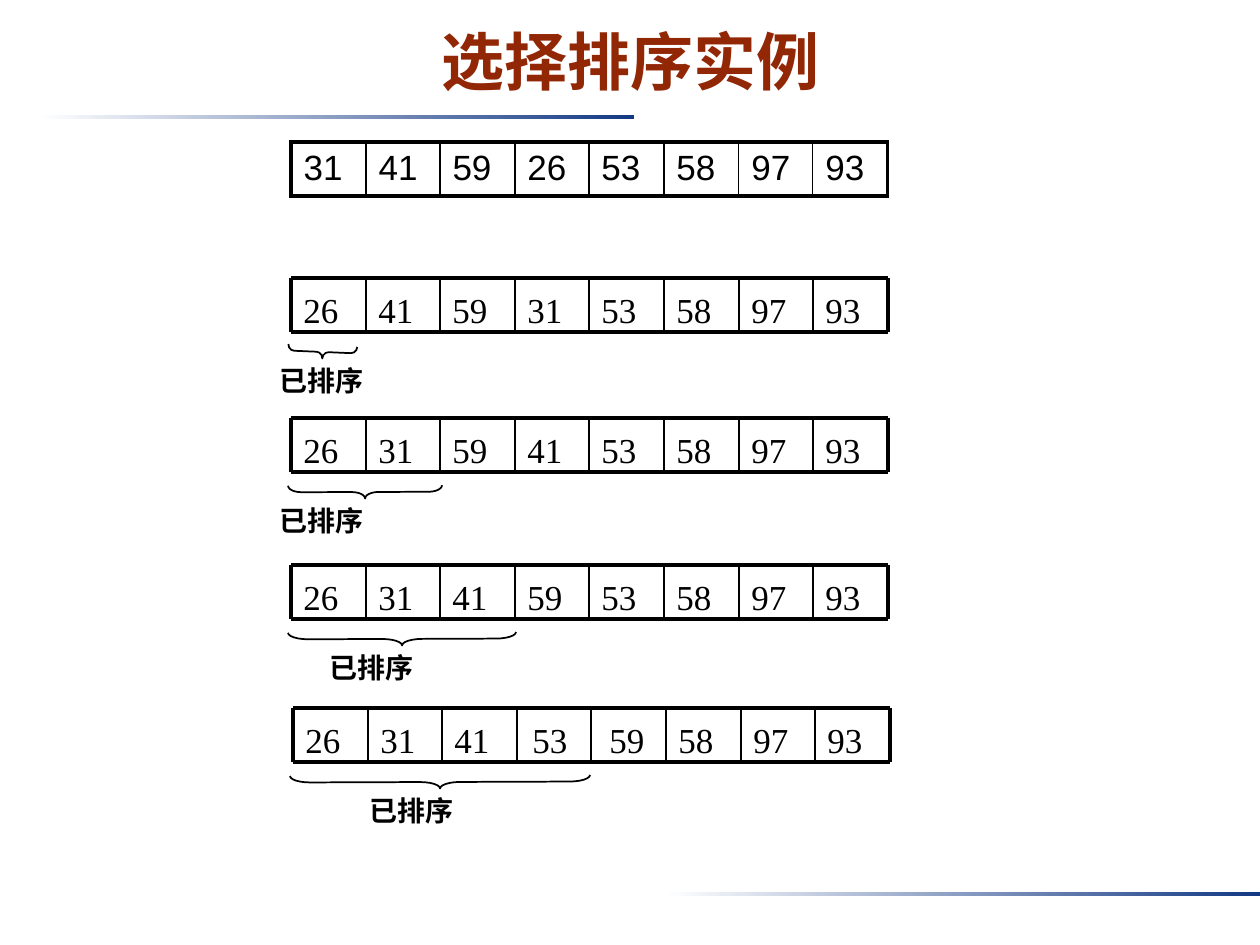
import pptx
import pptx.util
import pptx.dml.color
import pptx.enum.shapes
import pptx.enum.text
import pptx.oxml
import pptx.oxml.ns

BLACK = pptx.dml.color.RGBColor(0x00, 0x00, 0x00)
WHITE = pptx.dml.color.RGBColor(0xFF, 0xFF, 0xFF)
NAVY = pptx.dml.color.RGBColor(0x13, 0x39, 0x84)
RUST = pptx.dml.color.RGBColor(0x92, 0x27, 0x06)

TITLE = "选择排序实例"
LABEL = "已排序"
START = [31, 41, 59, 26, 53, 58, 97, 93]
STEPS = [
    dict(values=[26, 41, 59, 31, 53, 58, 97, 93], x=291, y=278,
         brace=69, turn=92.4, curl=0.47, label_x=267, nudge={}),
    dict(values=[26, 31, 59, 41, 53, 58, 97, 93], x=291, y=418,
         brace=154, turn=89.8, curl=1.04, label_x=267, nudge={}),
    dict(values=[26, 31, 41, 59, 53, 58, 97, 93], x=291, y=565,
         brace=228, turn=89.8, curl=1.55, label_x=317, nudge={}),
    dict(values=[26, 31, 41, 53, 59, 58, 97, 93], x=293, y=708,
         brace=300, turn=89.8, curl=1.55, label_x=357, nudge={3: 3, 4: 6}),
]
RULES = [(39, 115), (665, 892)]
ROW_W, ROW_H = 597, 54
THICK, THIN = 2.25, 1
EDGES = [round(ROW_W * i / len(START)) for i in range(len(START) + 1)]


def px(n):
    return round(n * 914400 / 126)


def box(*lengths):
    return [px(n) for n in lengths]


def style(p, font, size, color=BLACK, bold=False):
    p.font.name = font
    p.font.size = pptx.util.Pt(size)
    p.font.color.rgb = color
    p.font.bold = bold


def add_text(shapes, text, x, y, w, h, font, size, bold=False, top=6):
    tf = shapes.add_textbox(*box(x, y, w, h)).text_frame
    tf.word_wrap = True
    tf.margin_top = px(top)
    p = tf.paragraphs[0]
    p.text = text
    style(p, font, size, bold=bold)


def add_line(shapes, x1, y1, x2, y2, weight):
    line = shapes.add_connector(
        pptx.enum.shapes.MSO_CONNECTOR.STRAIGHT, *box(x1, y1, x2, y2))
    line.line.color.rgb = BLACK
    line.line.width = pptx.util.Pt(weight)
    line._element.spPr.append(pptx.oxml.parse_xml(
        f'<a:effectLst {pptx.oxml.ns.nsdecls("a")}/>'))


def set_border(cell, side, weight):
    cell._tc.get_or_add_tcPr().append(pptx.oxml.parse_xml(
        f'<a:{side} {pptx.oxml.ns.nsdecls("a")} w="{pptx.util.Pt(weight)}">'
        f'<a:solidFill><a:srgbClr val="{BLACK}"/></a:solidFill></a:{side}>'))


def add_start_table(shapes, values, x, y):
    table = shapes.add_table(1, len(values), *box(x, y, ROW_W, ROW_H)).table
    table.first_row = table.horz_banding = False
    last = len(values) - 1
    for i, value in enumerate(values):
        table.columns[i].width = px(EDGES[i + 1] - EDGES[i])
        cell = table.cell(0, i)
        cell.text = str(value)
        style(cell.text_frame.paragraphs[0], "Arial", 20)
        set_border(cell, "lnL", THICK if i == 0 else THIN)
        set_border(cell, "lnR", THICK if i == last else THIN)
        set_border(cell, "lnT", THICK)
        set_border(cell, "lnB", THICK)
        cell.fill.background()


def add_step(slide, step):
    shapes = slide.shapes.add_group_shape().shapes
    x, y = step["x"], step["y"]
    for i, value in enumerate(step["values"]):
        left = x + EDGES[i] + step["nudge"].get(i, 0)
        add_text(shapes, str(value), left, y, EDGES[1], ROW_H,
                 "Times New Roman", 20, top=10)
    for dy in (0, ROW_H):
        add_line(shapes, x, y + dy, x + ROW_W, y + dy, THICK)
    for edge in EDGES:
        weight = THICK if edge in (0, ROW_W) else THIN
        add_line(shapes, x + edge, y, x + edge, y + ROW_H, weight)

    length, depth = step["brace"], 13
    cx, cy = x - 3 + length / 2, y + 74
    brace = shapes.add_shape(
        pptx.enum.shapes.MSO_SHAPE.RIGHT_BRACE,
        *box(cx - depth / 2, cy - length / 2, depth, length))
    brace.rotation = step["turn"]
    brace.adjustments[0] = step["curl"]
    brace.shadow.inherit = False
    brace.fill.background()
    brace.line.color.rgb = BLACK
    brace.line.width = pptx.util.Pt(THIN)
    add_text(shapes, LABEL, step["label_x"], y + 80, 193, 47, "Arial", 16, bold=True)


def add_rule(shapes, x, y):
    sp = shapes.add_shape(
        pptx.enum.shapes.MSO_SHAPE.RECTANGLE, *box(x, y, 595, 4))
    sp.shadow.inherit = False
    sp.line.fill.background()
    sp.fill.gradient()
    sp.fill.gradient_angle = 0
    for stop, position, color in zip(sp.fill.gradient_stops, (0, 1), (WHITE, NAVY)):
        stop.position = position
        stop.color.rgb = color


def main():
    prs = pptx.Presentation()
    prs.slide_width, prs.slide_height = box(1260, 945)
    slide = prs.slides.add_slide(prs.slide_layouts[5])
    for x, y in RULES:
        add_rule(slide.shapes, x, y)

    title = slide.shapes.title
    title.left, title.top, title.width, title.height = box(95, 16, 1071, 130)
    tf = title.text_frame
    tf.vertical_anchor = pptx.enum.text.MSO_ANCHOR.TOP
    p = tf.paragraphs[0]
    p.text = TITLE
    p.alignment = pptx.enum.text.PP_ALIGN.CENTER
    style(p, "Arial", 36, RUST, True)

    add_start_table(slide.shapes, START, 291, 142)
    for step in STEPS:
        add_step(slide, step)
    prs.save("out.pptx")


if __name__ == "__main__":
    main()
